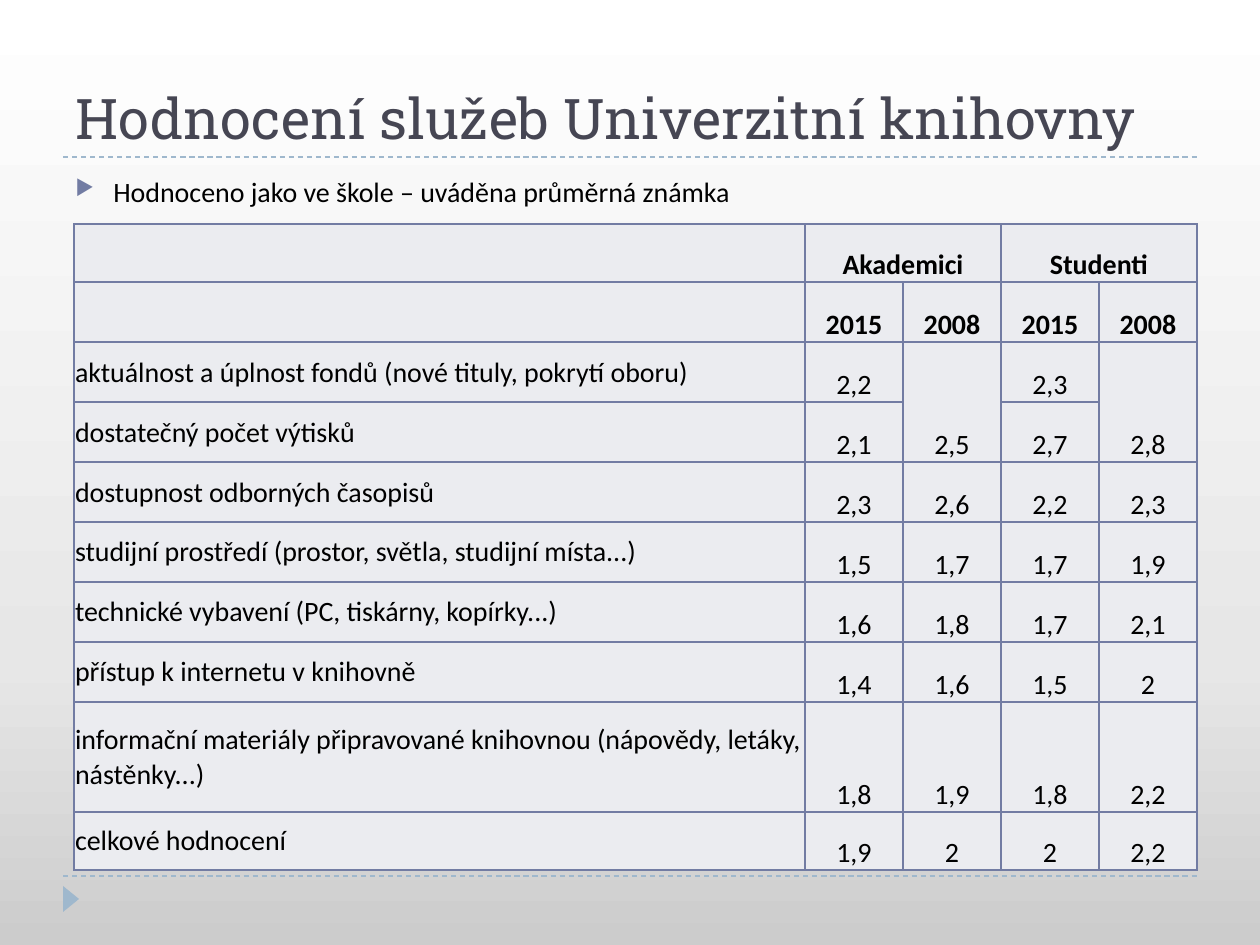
from lxml import etree
from pptx import Presentation
from pptx.dml.color import RGBColor
from pptx.enum.dml import MSO_LINE
from pptx.enum.shapes import MSO_CONNECTOR, MSO_SHAPE
from pptx.enum.text import MSO_ANCHOR, MSO_AUTO_SIZE, PP_ALIGN
from pptx.oxml import parse_xml
from pptx.oxml.ns import nsdecls, qn
from pptx.util import Pt

LEFT, CENTER = PP_ALIGN.LEFT, PP_ALIGN.CENTER
MIDDLE, BOTTOM = MSO_ANCHOR.MIDDLE, MSO_ANCHOR.BOTTOM
PX = 914400 / 126
THEME = {
    "title": {"name": "Roboto Slab", "size": Pt(32), "bold": False, "color": "464653"},
    "body": {"name": "Calibri", "size": Pt(16), "bold": False, "color": "000000"},
    "head": {"name": "Calibri", "size": Pt(16), "bold": True, "color": "000000"},
    "accent": "9FB8CD",
    "border": "727CA3",
    "cell": "EBECF0",
    "background": [(0, "CCCCCC"), (30, "E7E7E7"), (100, "FFFFFF")],
}


def px(*lengths):
    return [round(n * PX) for n in lengths]


def write(tf, text, style, align=LEFT):
    p = tf.paragraphs[0]
    p.alignment = align
    r = p.add_run()
    r.text = text
    for key, value in THEME[style].items():
        if key == "color":
            r.font.color.rgb = RGBColor.from_string(value)
        else:
            setattr(r.font, key, value)
    return p


prs = Presentation()
prs.slide_width, prs.slide_height = px(1260, 945)
s = prs.slides.add_slide(prs.slide_layouts[5])

# Background gradient, from bottom to top
fill = s.background.fill
fill.gradient()
fill.gradient_angle = 90
stops = s.element.find(".//" + qn("a:gsLst"))
for stop in list(stops):
    stops.remove(stop)
for position, color in THEME["background"]:
    stop = etree.SubElement(stops, qn("a:gs"), pos=str(position * 1000))
    etree.SubElement(stop, qn("a:srgbClr"), val=color)

# Dashed rules above and below the content
for y in (157, 876):
    rule = s.shapes.add_connector(MSO_CONNECTOR.STRAIGHT, *px(63, y, 1197, y))
    rule.line.color.rgb = RGBColor.from_string(THEME["accent"])
    rule.line.width = Pt(0.75)
    rule.line.dash_style = MSO_LINE.DASH
    etree.SubElement(rule.element.spPr, qn("a:effectLst"))

# Corner marker
marker = s.shapes.add_shape(MSO_SHAPE.ISOSCELES_TRIANGLE, *px(58, 891, 26, 16))
marker.rotation = 90
marker.shadow.inherit = False
marker.fill.solid()
marker.fill.fore_color.rgb = RGBColor.from_string(THEME["accent"])
marker.line.fill.background()

# Title
title = s.shapes.title
title.left, title.top, title.width, title.height = px(63, 21, 1134, 136)
tf = title.text_frame
tf.auto_size = MSO_AUTO_SIZE.NONE
tf.vertical_anchor = BOTTOM
write(tf, "Hodnocení služeb Univerzitní knihovny", "title")

# Bulleted note
note = s.shapes.add_textbox(*px(63, 168, 1134, 56))
tf = note.text_frame
tf.word_wrap = True
p = write(tf, "Hodnoceno jako ve škole – uváděna průměrná známka", "body")
p.space_before = Pt(6)
pPr = p._p.get_or_add_pPr()
indent = px(38)[0]
pPr.set("marL", str(indent))
pPr.set("indent", str(-indent))
bullet_color = etree.SubElement(pPr, qn("a:buClr"))
etree.SubElement(bullet_color, qn("a:srgbClr"), val=THEME["border"])
etree.SubElement(pPr, qn("a:buSzPct"), val="76000")
etree.SubElement(pPr, qn("a:buChar"), char="▶")

# Table of average marks; None marks a cell covered by a merge
rows = [
    ("", "Akademici", None, "Studenti", None),
    ("", "2015", "2008", "2015", "2008"),
    ("aktuálnost a úplnost fondů (nové tituly, pokrytí oboru)", "2,2", "2,5", "2,3", "2,8"),
    ("dostatečný počet výtisků", "2,1", None, "2,7", None),
    ("dostupnost odborných časopisů", "2,3", "2,6", "2,2", "2,3"),
    ("studijní prostředí (prostor, světla, studijní místa...)", "1,5", "1,7", "1,7", "1,9"),
    ("technické vybavení (PC, tiskárny, kopírky...)", "1,6", "1,8", "1,7", "2,1"),
    ("přístup k internetu v knihovně", "1,4", "1,6", "1,5", "2"),
    ("informační materiály připravované knihovnou (nápovědy, letáky, nástěnky...)",
     "1,8", "1,9", "1,8", "2,2"),
    ("celkové hodnocení", "1,9", "2", "2", "2,2"),
]
widths = [731] + [98] * 4
heights = [58] + [60] * 7 + [110, 58]
table = s.shapes.add_table(
    len(rows), len(widths), *px(74, 224, sum(widths), sum(heights))).table
table.first_row = table.horz_banding = False
for column, width in zip(table.columns, px(*widths)):
    column.width = width
for row, height in zip(table.rows, px(*heights)):
    row.height = height
for first, last in (((0, 1), (0, 2)), ((0, 3), (0, 4)), ((2, 2), (3, 2)), ((2, 4), (3, 4))):
    table.cell(*first).merge(table.cell(*last))

for i, row in enumerate(rows):
    for j, text in enumerate(row):
        cell = table.cell(i, j)
        cell.margin_left, cell.margin_right, cell.margin_top, cell.margin_bottom = px(1, 1, 1, 0)
        cell.vertical_anchor = BOTTOM if j else MIDDLE
        tcPr = cell._tc.get_or_add_tcPr()
        for side in ("lnL", "lnR", "lnT", "lnB"):
            tcPr.append(parse_xml(
                f'<a:{side} {nsdecls("a")} w="{Pt(1)}"><a:solidFill>'
                f'<a:srgbClr val="{THEME["border"]}"/></a:solidFill></a:{side}>'))
        cell.fill.solid()
        cell.fill.fore_color.rgb = RGBColor.from_string(THEME["cell"])
        if text:
            write(cell.text_frame, text, "head" if i < 2 else "body", CENTER if j else LEFT)

prs.save("out.pptx")
